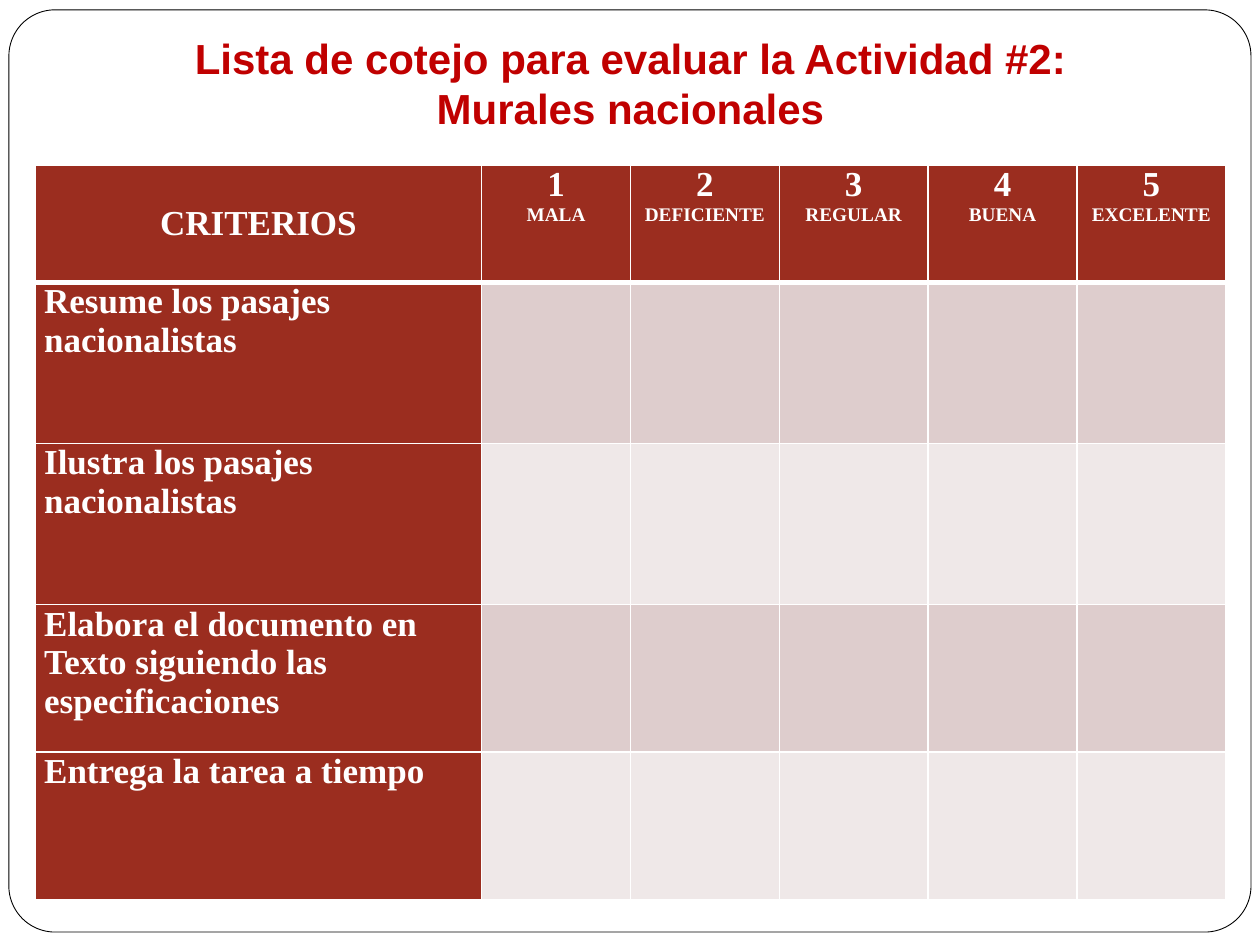
import pptx
import pptx.util
import pptx.dml.color
import pptx.enum.shapes
import pptx.enum.text
import pptx.oxml
import pptx.oxml.ns
from dataclasses import dataclass

Cm = pptx.util.Cm
Pt = pptx.util.Pt
Align = pptx.enum.text.PP_ALIGN
Anchor = pptx.enum.text.MSO_ANCHOR


@dataclass(frozen=True)
class Theme:
    white: str = "FFFFFF"
    black: str = "000000"
    title: str = "C00000"
    head: str = "9B2D1F"
    bands: tuple = ("DECDCD", "EFE8E8")
    sans: str = "Arial"
    serif: str = "Times New Roman"
    big: int = 24
    body: int = 20
    small: int = 11


def rgb(code):
    return pptx.dml.color.RGBColor.from_string(code)


class Page:
    def __init__(self, slide, theme):
        self.slide = slide
        self.theme = theme

    def frame(self, left, top, width, height):
        kind = pptx.enum.shapes.MSO_SHAPE.ROUNDED_RECTANGLE
        box = self.slide.shapes.add_shape(kind, left, top, width, height)
        box.adjustments[0] = 0.05
        box.shadow.inherit = False
        box.fill.solid()
        box.fill.fore_color.rgb = rgb(self.theme.white)
        box.line.color.rgb = rgb(self.theme.black)
        box.line.width = Pt(0.5)

    def lines(self, text, pairs, font, color, align):
        """Fill a text frame from (words, size) pairs, one paragraph each."""
        for i, (words, size) in enumerate(pairs):
            para = text.add_paragraph() if i else text.paragraphs[0]
            para.alignment = align
            run = para.add_run()
            run.text = words
            run.font.name = font
            run.font.size = Pt(size)
            run.font.bold = True
            run.font.color.rgb = rgb(color)

    def title(self, left, top, width, height, rows):
        text = self.slide.shapes.add_textbox(left, top, width, height).text_frame
        text.word_wrap = True
        text.vertical_anchor = Anchor.MIDDLE
        text.margin_bottom = Cm(0.38)
        pairs = [(row, self.theme.big) for row in rows]
        self.lines(text, pairs, self.theme.sans, self.theme.title, Align.CENTER)

    def edge(self, cell, side, width):
        props = cell._tc.get_or_add_tcPr()
        line = pptx.oxml.parse_xml(
            f'<a:ln{side} {pptx.oxml.ns.nsdecls("a")} w="{Pt(width)}"><a:solidFill>'
            f'<a:srgbClr val="{self.theme.white}"/></a:solidFill></a:ln{side}>')
        props.insert("LRTB".index(side), line)

    def cell(self, cell, fill, top, bottom):
        for side, width in zip("LRTB", (1, 1, top, bottom)):
            self.edge(cell, side, width)
        cell.fill.solid()
        cell.fill.fore_color.rgb = rgb(fill)
        cell.margin_left = cell.margin_right = Cm(0.18)
        cell.margin_top = cell.margin_bottom = 0

    def label(self, cell, pairs, align):
        self.lines(cell.text_frame, pairs, self.theme.serif, self.theme.white, align)

    def grid(self, left, top, cols, rows, corner, marks, tasks):
        theme = self.theme
        table = self.slide.shapes.add_table(
            len(rows), len(cols), left, top, sum(cols), sum(rows)).table
        for col, width in zip(table.columns, cols):
            col.width = width
        for row, height in zip(table.rows, rows):
            row.height = height

        # Fills and borders
        for r in range(len(rows)):
            for c in range(len(cols)):
                fill = theme.head if r == 0 or c == 0 else theme.bands[(r - 1) % 2]
                self.cell(table.cell(r, c), fill,
                          3 if r == 1 else 1, 3 if r == 0 else 1)

        # Header row
        first = table.cell(0, 0)
        first.vertical_anchor = Anchor.MIDDLE
        self.label(first, [(corner, theme.body)], Align.CENTER)
        for c, mark in enumerate(marks, 1):
            self.label(table.cell(0, c),
                       [(str(c), theme.body), (mark, theme.small)], Align.CENTER)

        # Criteria column
        for r, task in enumerate(tasks, 1):
            self.label(table.cell(r, 0), [(task, theme.body)], Align.LEFT)


def main():
    deck = pptx.Presentation()
    deck.slide_width, deck.slide_height = Cm(25.4), Cm(19.05)
    page = Page(deck.slides.add_slide(deck.slide_layouts[6]), Theme())

    # Border of the page
    page.frame(Cm(0.18), Cm(0.2), Cm(25.04), Cm(18.59))

    # Checklist
    page.grid(
        Cm(0.71), Cm(3.33),
        [Cm(9)] + [Cm(3)] * 5,
        [Cm(2.36)] + [Cm(3.25)] * 2 + [Cm(2.97)] * 2,
        "CRITERIOS",
        ["MALA", "DEFICIENTE", "REGULAR", "BUENA", "EXCELENTE"],
        ["Resume los pasajes nacionalistas",
         "Ilustra los pasajes nacionalistas",
         "Elabora el documento en Texto siguiendo las especificaciones",
         "Entrega la tarea a tiempo"])

    # Heading
    page.title(Cm(0.71), Cm(0.48), Cm(24), Cm(2.64),
               ["Lista de cotejo para evaluar la Actividad #2:",
                "Murales nacionales"])

    deck.save("out.pptx")


if __name__ == "__main__":
    main()
